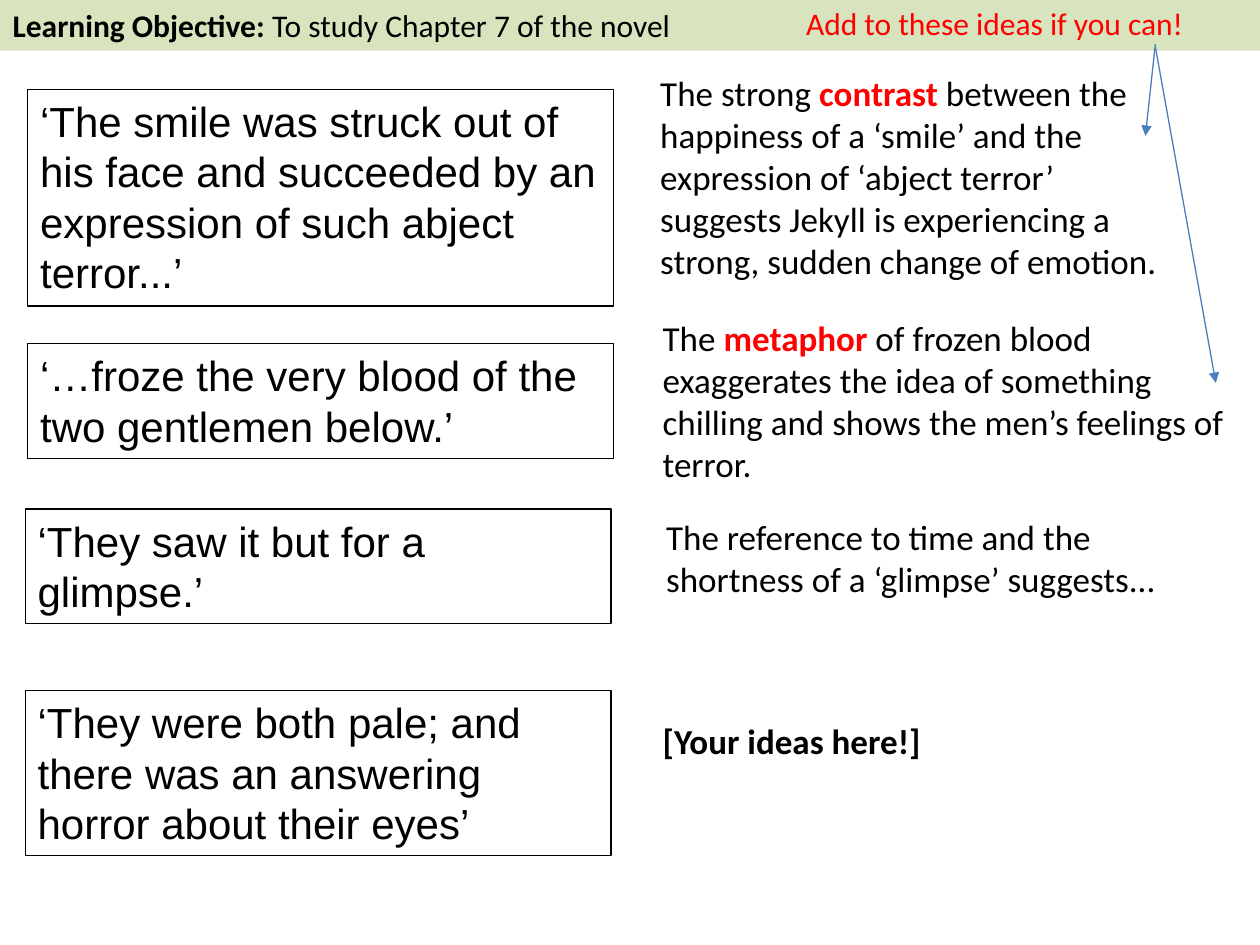
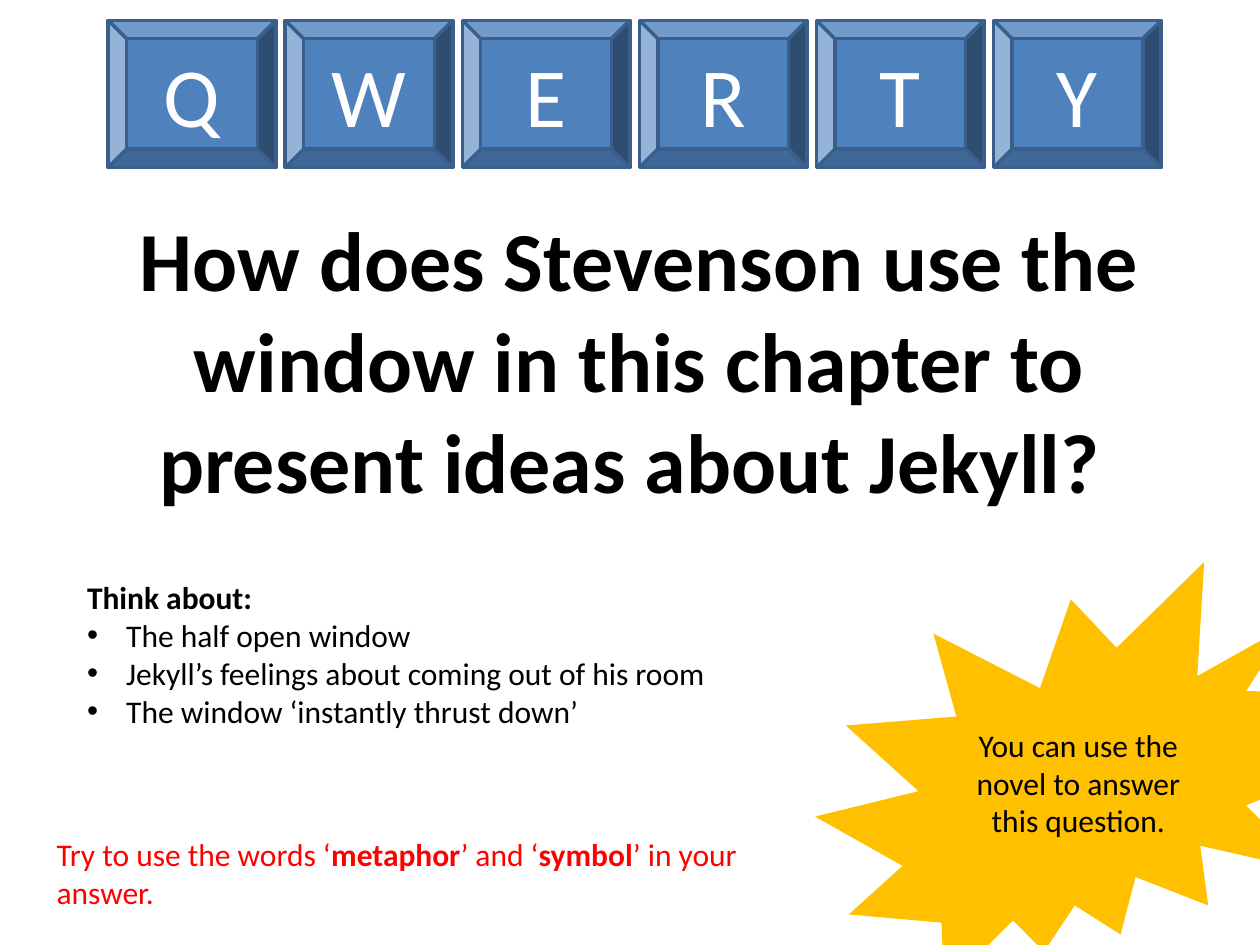
from lxml.etree import SubElement
from pptx import Presentation
from pptx.dml.color import RGBColor
from pptx.enum.shapes import MSO_CONNECTOR, MSO_SHAPE
from pptx.enum.text import MSO_ANCHOR, MSO_AUTO_SIZE, PP_ALIGN
from pptx.oxml.ns import qn
from pptx.util import Cm, Pt

BLACK, WHITE, RED = "000000", "FFFFFF", "FF0000"
BAND, BLUE, EDGE, ARROW, GOLD = "D7E4BD", "4F81BD", "3A5F8C", "4B7EBC", "FFC000"

GOAL = "*Learning Objective:* To study Chapter 7 of the novel"
HINT = "Add to these ideas if you can!"
QUOTES = [
    (0.56, 1.8, 4.37, "‘The smile was struck out of his face and succeeded by an "
     "expression of such abject terror...’"),
    (0.56, 6.93, 2.31, "‘…froze the very blood of the two gentlemen below.’"),
    (0.51, 10.26, 2.31, "‘They saw it but for a glimpse.’"),
    (0.51, 13.92, 3.33, "‘They were both pale; and there was an answering horror "
     "about their eyes’"),
]
IDEAS = [
    (13.06, 1.32, 4.52, RED, "The strong *contrast* between the happiness of a ‘smile’ "
     "and the expression of ‘abject terror’\nsuggests Jekyll is experiencing a\n"
     "strong, sudden change of emotion."),
    (13.11, 6.25, 3.68, RED, "The *metaphor* of frozen blood exaggerates the idea of "
     "something chilling and shows the men’s feelings of terror."),
    (13.18, 10.26, 1.96, BLACK, "The reference to time and the shortness of a ‘glimpse’ "
     "suggests..."),
    (13.11, 14.38, 1.12, BLACK, "*[Your ideas here!]*"),
]
ARROWS = [(23.29, 0.89, 23.09, 2.74), (23.29, 0.94, 24.51, 7.72)]

KEYS = "QWERTY"
ASK = "*How does Stevenson use the window in this chapter to present ideas about Jekyll? *"
THINK = ["*Think about:*", "The half open window",
         "Jekyll’s feelings about coming out of his room",
         "The window ‘instantly thrust down’"]
TIP = "Try to use the words ‘*metaphor*’ and ‘*symbol*’ in your answer."
STAR = "You can use the novel to answer this question."


def rgb(hue):
    """Turn a hex string into a colour."""
    return RGBColor.from_string(hue)


def write(shape, text, size=18, font="Calibri", hue=BLACK, hot=None,
          align=PP_ALIGN.LEFT, anchor=MSO_ANCHOR.TOP):
    """Fill a shape with lines of text, where *stars* mark bold runs."""
    frame = shape.text_frame
    frame.word_wrap = True
    frame.auto_size = MSO_AUTO_SIZE.NONE
    frame.vertical_anchor = anchor
    for row, line in enumerate(text.split("\n")):
        para = frame.add_paragraph() if row else frame.paragraphs[0]
        para.alignment = align
        para.space_before = Pt(0)
        for turn, part in enumerate(line.split("*")):
            if not part:
                continue
            run = para.add_run()
            run.text = part
            bold = turn % 2 == 1
            run.font.name, run.font.size, run.font.bold = font, Pt(size), bold
            run.font.color.rgb = rgb(hot if bold and hot else hue)


def place(shape, *box):
    """Move a shape to a box given in centimetres."""
    shape.left, shape.top, shape.width, shape.height = map(Cm, box)
    return shape


def label(slide, box, text, **form):
    """Add a text box."""
    write(slide.shapes.add_textbox(*map(Cm, box)), text, **form)


def draw(slide, kind, box, text, fill=None, edge=None, width=0.75, **form):
    """Add a preset shape with text."""
    shape = slide.shapes.add_shape(kind, *map(Cm, box))
    shape.shadow.inherit = False
    if fill:
        shape.fill.solid()
        shape.fill.fore_color.rgb = rgb(fill)
    else:
        shape.fill.background()
    if edge:
        shape.line.color.rgb = rgb(edge)
        shape.line.width = Pt(width)
    else:
        shape.line.fill.background()
    write(shape, text, **form)


def point(slide, ends):
    """Add an arrow."""
    link = slide.shapes.add_connector(MSO_CONNECTOR.STRAIGHT, *map(Cm, ends))
    link.line.color.rgb = rgb(ARROW)
    link.line.width = Pt(0.75)
    SubElement(link.line._get_or_add_ln(), qn("a:tailEnd"), type="triangle")
    SubElement(link._element.spPr, qn("a:effectLst"))


def mark(para, dot):
    """Give a paragraph a hanging bullet, or none."""
    props = para._p.get_or_add_pPr()
    gap = Cm(0.79) if dot else 0
    props.set("marL", str(gap))
    props.set("indent", str(-gap))
    if dot:
        SubElement(props, qn("a:buFont"), typeface="Arial")
        SubElement(props, qn("a:buChar"), char="•")
    else:
        SubElement(props, qn("a:buNone"))


def study(deck):
    """Build the slide of quotes and ideas."""
    slide = deck.slides.add_slide(deck.slide_layouts[5])
    band = place(slide.shapes.title, 0, 0, 25.4, 1.02)
    band.fill.solid()
    band.fill.fore_color.rgb = rgb(BAND)
    write(band, GOAL)
    for left, top, high, text in QUOTES:
        draw(slide, MSO_SHAPE.RECTANGLE, (left, top, 11.81, high), text,
             edge=BLACK, size=24, font="Arial")
    for left, top, high, hot, text in IDEAS:
        label(slide, (left, top, 11.99, high), text, size=20, hot=hot)
    label(slide, (16, -0.05, 9.4, 1.02), HINT, hue=RED)
    for ends in ARROWS:
        point(slide, ends)


def task(deck):
    """Build the slide with the question."""
    slide = deck.slides.add_slide(deck.slide_layouts[1])
    mid = {"align": PP_ALIGN.CENTER, "anchor": MSO_ANCHOR.MIDDLE}
    draw(slide, MSO_SHAPE.EXPLOSION2, (16.43, 11.33, 11.46, 8.61), STAR,
         fill=GOLD, **mid)
    for spot, key in enumerate(KEYS):
        draw(slide, MSO_SHAPE.BEVEL, (2.18 + 3.57 * spot, 0.41, 3.38, 2.97), key,
             fill=BLUE, edge=EDGE, width=2, size=48, hue=WHITE, **mid)
    write(place(slide.shapes.title, 1.09, 4.06, 23.6, 6.4), ASK, size=48,
          align=PP_ALIGN.CENTER)
    body = place(slide.placeholders[1], 1.5, 11.53, 22.4, 3.33)
    write(body, "\n".join(THINK))
    for row, para in enumerate(body.text_frame.paragraphs):
        mark(para, row > 0)
    label(slide, (0.89, 16.71, 15.01, 1.8), TIP, hue=RED)


def main():
    """Build and save the deck."""
    deck = Presentation()
    deck.slide_width, deck.slide_height = Cm(25.4), Cm(19.05)
    study(deck)
    task(deck)
    deck.save("out.pptx")


if __name__ == "__main__":
    main()
